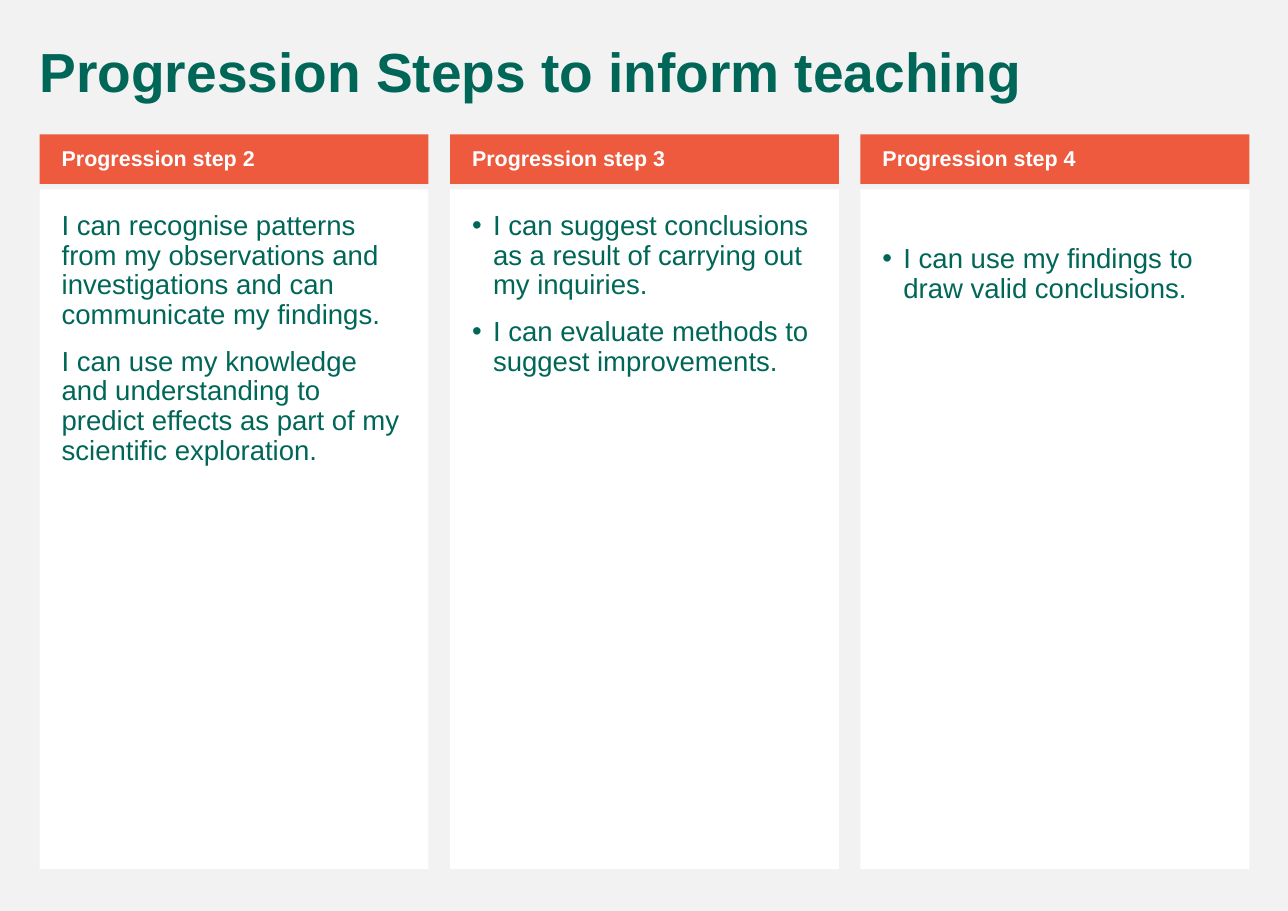
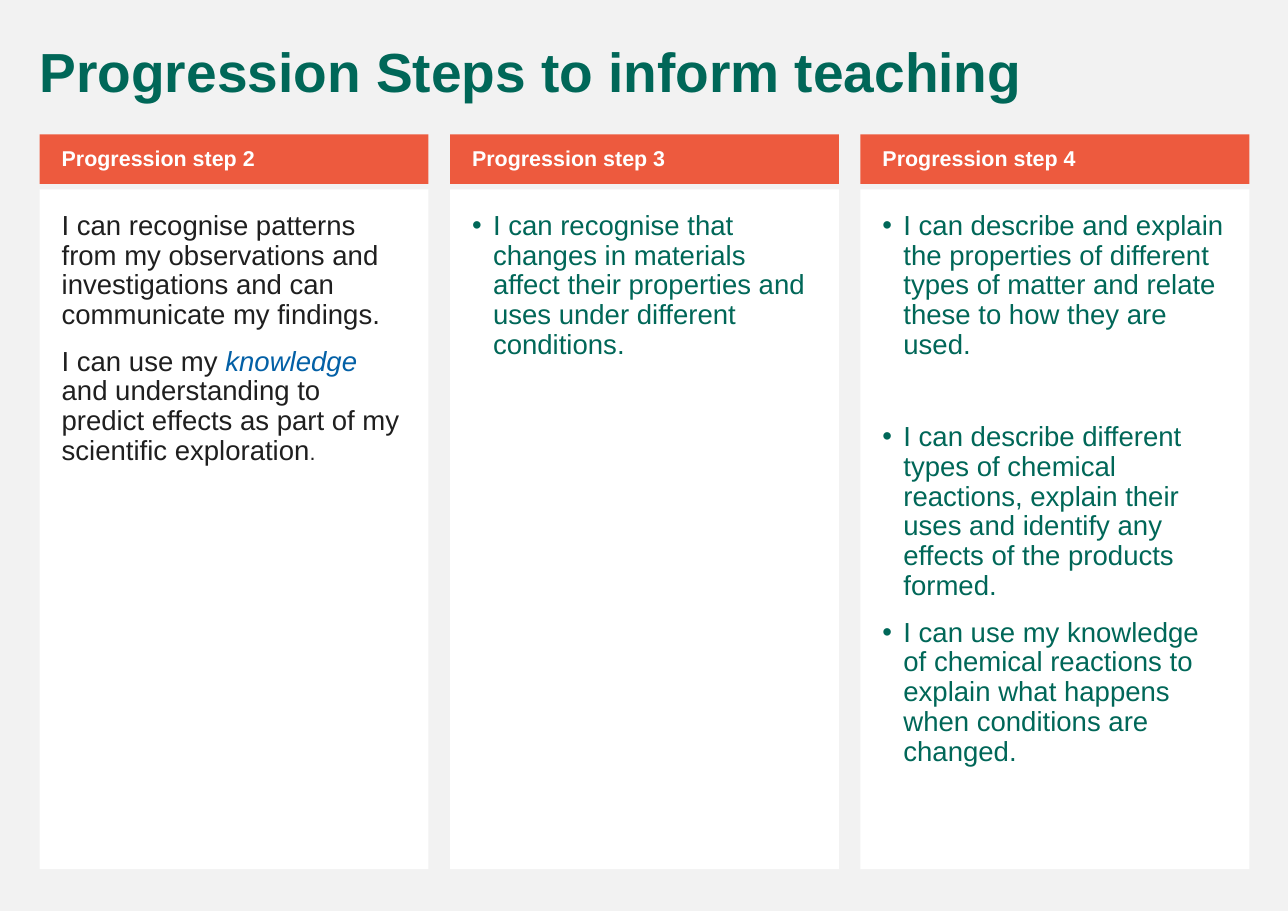
"""Build two slides that list the progression steps in three columns."""
from lxml import etree
from pptx import Presentation
from pptx.dml.color import RGBColor
from pptx.enum.shapes import MSO_SHAPE
from pptx.enum.text import MSO_ANCHOR, MSO_AUTO_SIZE, PP_ALIGN
from pptx.oxml.ns import qn
from pptx.util import Inches, Pt

RECT = MSO_SHAPE.RECTANGLE
TOP, MIDDLE = MSO_ANCHOR.TOP, MSO_ANCHOR.MIDDLE
LEFT = PP_ALIGN.LEFT
NO_FIT = MSO_AUTO_SIZE.NONE

COLOURS = {
    "background": "F2F2F2",
    "panel": "FFFFFF",
    "band": "ED5A3E",
    "green": "006758",
    "ink": "1F1F1F",
    "link": "0360A6",
    "white": "FFFFFF",
}
FONT = "Arial"
TITLE = "Progression Steps to inform teaching"
MARGIN, RIGHT_EDGE, COLUMN_WIDTH = 0.36, 11.34, 3.53
PITCH = (RIGHT_EDGE - MARGIN - COLUMN_WIDTH) / 2
BAND_TOP, BAND_HEIGHT = 1.22, 0.45
PANEL_TOP, PANEL_HEIGHT = 1.72, 6.17
INDENT = 0.19

SLIDES = [
    [
        {"paragraphs": [
            [("I can recognise patterns from my observations and investigations and can communicate my findings.", {})],
            [("I can use my knowledge and understanding to predict effects as part of my scientific exploration.", {})],
        ]},
        {"bullets": True, "paragraphs": [
            [("I can suggest conclusions as a result of carrying out my inquiries.", {})],
            [("I can evaluate methods to suggest improvements.", {})],
        ]},
        {"bullets": True, "top_inset": 0.5, "paragraphs": [
            [("I can use my findings to draw valid conclusions.", {})],
        ]},
    ],
    [
        {"colour": "ink", "paragraphs": [
            [("I can recognise patterns from my observations and investigations and can communicate my findings.", {})],
            [("I can use my ", {}),
             ("knowledge", {"colour": "link", "italic": True}),
             (" and understanding to predict effects as part of my scientific exploration", {}),
             (".", {"size": 14})],
        ]},
        {"bullets": True, "paragraphs": [
            [("I can recognise that changes in materials affect their properties and uses under different conditions.", {})],
        ]},
        {"bullets": True, "gaps": {1: 41}, "paragraphs": [
            [("I can describe and explain the properties of different types of matter and relate these to how they are used.", {})],
            [("I can describe different types of chemical reactions, explain their uses and identify any effects of the products formed.", {})],
            [("I can use my knowledge of chemical reactions to explain what happens when conditions are changed.", {})],
        ]},
    ],
]


def add_box(s, left, top, height, fill, anchor, insets):
    """Add a filled column rectangle and return its text frame."""
    box = s.shapes.add_shape(RECT, Inches(left), Inches(top), Inches(COLUMN_WIDTH), Inches(height))
    box.shadow.inherit = False
    box.fill.solid()
    box.fill.fore_color.rgb = RGBColor.from_string(COLOURS[fill])
    box.line.fill.background()
    tf = box.text_frame
    tf.word_wrap = True
    tf.vertical_anchor = anchor
    tf.margin_left, tf.margin_top, tf.margin_right, tf.margin_bottom = map(Inches, insets)
    return tf


def format_paragraph(p, size, colour, bold=False, space_before=11):
    """Give a paragraph and its runs the shared text style."""
    p.alignment = LEFT
    p.line_spacing = 0.9
    p.space_before = Pt(space_before)
    for r in p.runs:
        r.font.name = FONT
        r.font.size = Pt(size)
        r.font.bold = bold
        r.font.color.rgb = RGBColor.from_string(COLOURS[colour])


prs = Presentation()
prs.slide_width, prs.slide_height = Inches(11.69), Inches(8.27)
background = prs.slide_master.background.fill
background.solid()
background.fore_color.rgb = RGBColor.from_string(COLOURS["background"])
layout = prs.slide_layouts[5]

for columns in SLIDES:
    s = prs.slides.add_slide(layout)
    title = s.shapes.title
    title.left, title.top = Inches(0.26), Inches(0.36)
    title.width, title.height = Inches(11.08), Inches(0.65)
    tf = title.text_frame
    tf.text = TITLE
    tf.word_wrap = True
    tf.auto_size = NO_FIT
    tf.vertical_anchor = TOP
    format_paragraph(tf.paragraphs[0], 36, "green", bold=True)

    for i, column in enumerate(columns):
        left = MARGIN + i * PITCH
        tf = add_box(s, left, BAND_TOP, BAND_HEIGHT, "band", MIDDLE, (0.2, 0.05, 0.1, 0.05))
        tf.text = f"Progression step {i + 2}"
        format_paragraph(tf.paragraphs[0], 14, "white", bold=True)

        insets = (0.2, column.get("top_inset", 0.2), 0.2, 0.2)
        tf = add_box(s, left, PANEL_TOP, PANEL_HEIGHT, "panel", TOP, insets)
        gaps = column.get("gaps", {})
        for j, runs in enumerate(column["paragraphs"]):
            p = tf.add_paragraph() if j else tf.paragraphs[0]
            for text, _ in runs:
                p.add_run().text = text
            format_paragraph(p, 18, column.get("colour", "green"), space_before=gaps.get(j, 11))
            for r, (_, style) in zip(p.runs, runs):
                if "colour" in style:
                    r.font.color.rgb = RGBColor.from_string(COLOURS[style["colour"]])
                if "size" in style:
                    r.font.size = Pt(style["size"])
                r.font.italic = style.get("italic", False)
            if column.get("bullets"):
                pPr = p._p.get_or_add_pPr()
                pPr.set("marL", str(Inches(INDENT)))
                pPr.set("indent", str(-Inches(INDENT)))
                etree.SubElement(pPr, qn("a:buFont")).set("typeface", FONT)
                etree.SubElement(pPr, qn("a:buChar")).set("char", "•")

prs.save("out.pptx")
